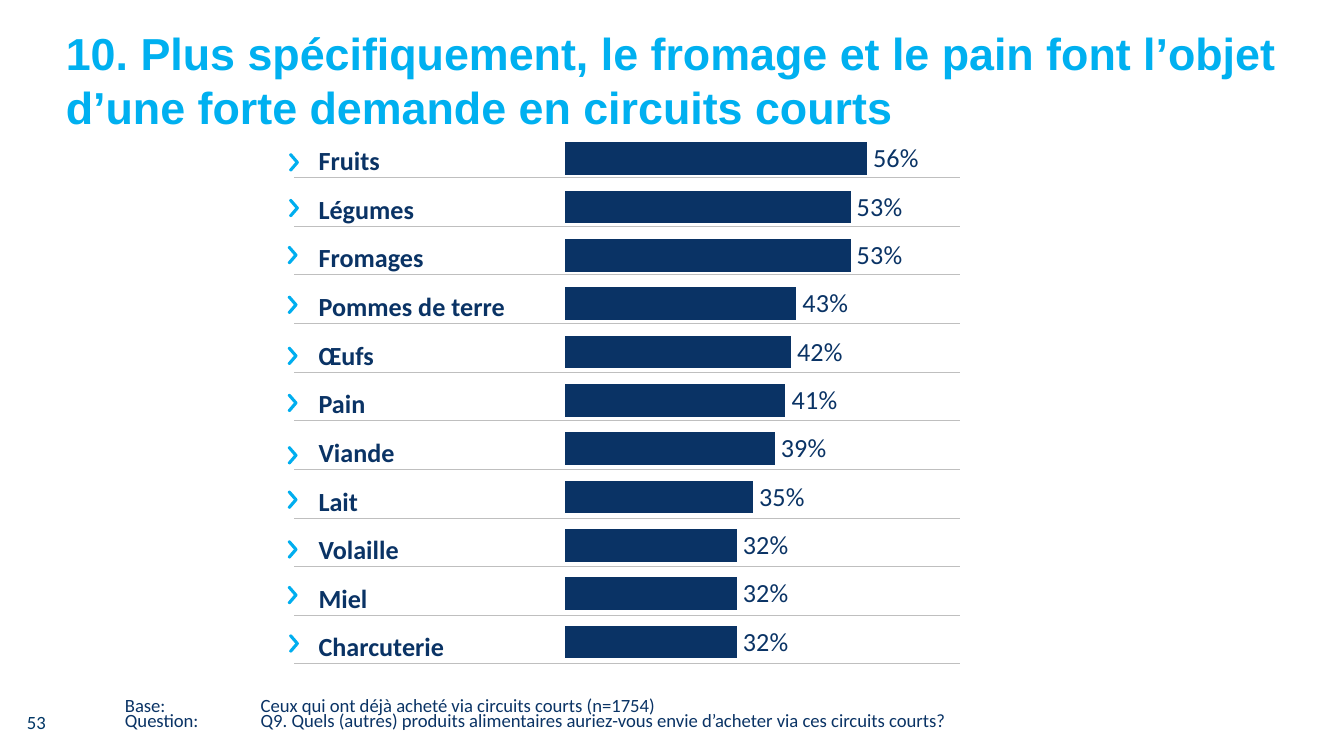
from lxml import etree
from pptx import Presentation
from pptx.chart.data import CategoryChartData
from pptx.dml.color import RGBColor
from pptx.enum.chart import XL_CHART_TYPE, XL_LABEL_POSITION, XL_TICK_LABEL_POSITION, XL_TICK_MARK
from pptx.enum.text import MSO_ANCHOR, MSO_AUTO_SIZE, PP_ALIGN
from pptx.oxml import parse_xml
from pptx.oxml.ns import nsdecls, qn
from pptx.util import Inches, Pt

BAR_CLUSTERED = XL_CHART_TYPE.BAR_CLUSTERED
OUTSIDE_END = XL_LABEL_POSITION.OUTSIDE_END
NO_LABELS = XL_TICK_LABEL_POSITION.NONE
NO_TICKS = XL_TICK_MARK.NONE
TOP, MIDDLE, BOTTOM = MSO_ANCHOR.TOP, MSO_ANCHOR.MIDDLE, MSO_ANCHOR.BOTTOM
LEFT = PP_ALIGN.LEFT
NO_AUTOFIT = MSO_AUTO_SIZE.NONE

THEME = {
    "title": RGBColor.from_string("00B0F0"),
    "chevron": RGBColor.from_string("00AEEF"),
    "navy": RGBColor.from_string("0A3365"),
    "page_number": RGBColor.from_string("003665"),
    "white": RGBColor.from_string("FFFFFF"),
    "rule": "BFBFBF",
    "title_font": "Arial",
    "body_font": "Calibri",
    "title_size": Pt(24),
    "body_size": Pt(14),
    "note_size": Pt(10),
}

# Product, share in percent, left and top of its chevron
PRODUCTS = [
    ("Fruits", 56, 2.15, 1.14),
    ("Légumes", 53, 2.15, 1.48),
    ("Fromages", 53, 2.14, 1.83),
    ("Pommes de terre", 43, 2.14, 2.2),
    ("Œufs", 42, 2.14, 2.58),
    ("Pain", 41, 2.14, 2.93),
    ("Viande", 39, 2.14, 3.32),
    ("Lait", 35, 2.14, 3.65),
    ("Volaille", 32, 2.14, 4.02),
    ("Miel", 32, 2.14, 4.36),
    ("Charcuterie", 32, 2.15, 4.72),
]

# Outline of one chevron, in hundredths of an inch
CHEVRON = [(1.5, 0), (2.3, 0.5), (7, 5.9), (7.4, 6.8), (7, 7.8), (2.3, 13.2), (1.4, 13.6),
           (0.5, 13.2), (0.1, 12.5), (0.5, 11.7), (4.7, 6.8), (0.5, 2), (0.1, 1.2), (0.5, 0.4)]


def style_font(font, color, size, name=THEME["body_font"], bold=False):
    font.name = name
    font.size = size
    font.bold = bold
    font.color.rgb = color


def set_frame(frame, anchor, insets):
    """Fix the wrapping, the anchor and the insets (left, top, right, bottom)."""
    frame.word_wrap = True
    frame.auto_size = NO_AUTOFIT
    frame.vertical_anchor = anchor
    frame.margin_left, frame.margin_top, frame.margin_right, frame.margin_bottom = map(Inches, insets)


deck = Presentation()
deck.slide_width = Inches(10)
deck.slide_height = deck.slide_width * 9 // 16
page = deck.slides.add_slide(deck.slide_layouts[5])
shapes = page.shapes

# Title
title = shapes.title
title.left, title.top, title.width, title.height = Inches(0.39), Inches(0.14), Inches(9.33), Inches(0.59)
set_frame(title.text_frame, TOP, (0.1, 0.05, 0.1, 0.05))
title.text_frame.text = ("10. Plus spécifiquement, le fromage et le pain font l’objet "
                         "d’une forte demande en circuits courts")
para = title.text_frame.paragraphs[0]
para.alignment = LEFT
style_font(para.runs[0].font, THEME["title"], THEME["title_size"], THEME["title_font"], True)

# Base and question
note = shapes.add_textbox(Inches(0.93), Inches(5.22), Inches(8.15), Inches(0.31))
set_frame(note.text_frame, TOP, (0, 0, 0, 0))
note.text_frame.text = (
    "Base:\tCeux qui ont déjà acheté via circuits courts (n=1754)\n"
    "Question:\tQ9. Quels (autres) produits alimentaires auriez-vous envie "
    "d’acheter via ces circuits courts?"
)
for para in note.text_frame.paragraphs:
    para.line_spacing = Pt(8)
    tabs = etree.SubElement(para._p.get_or_add_pPr(), qn("a:tabLst"))
    etree.SubElement(tabs, qn("a:tab"), pos=str(Inches(1.01)), algn="l")
    for span in para.runs:
        style_font(span.font, THEME["navy"], THEME["note_size"])

# Page number
number = shapes.add_textbox(Inches(0.11), Inches(5.22), Inches(2.33), Inches(0.3))
set_frame(number.text_frame, MIDDLE, (0.09, 0.04, 0.09, 0.04))
number.text_frame.text = "53"
style_font(number.text_frame.paragraphs[0].runs[0].font, THEME["page_number"], THEME["note_size"])

# Product names, each above a thin rule
table = shapes.add_table(len(PRODUCTS), 1, Inches(2.19), Inches(0.96), Inches(4.95), Inches(3.98)).table
table.first_row = False
table.horz_banding = False
for row, (product, *_) in enumerate(PRODUCTS):
    cell = table.cell(row, 0)
    cell.text = product
    cell.vertical_anchor = BOTTOM
    cell.margin_left = Inches(0.18)
    cell.margin_top = cell.margin_right = cell.margin_bottom = 0
    cell.fill.background()
    style_font(cell.text_frame.paragraphs[0].runs[0].font, THEME["navy"], THEME["body_size"], bold=True)
    properties = cell._tc.get_or_add_tcPr()
    for index, side in enumerate(("lnL", "lnR", "lnT", "lnB")):
        ruled = side == "lnB" or (side == "lnT" and row > 0)
        paint = f'<a:solidFill><a:srgbClr val="{THEME["rule"]}"/></a:solidFill>' if ruled else "<a:noFill/>"
        border = parse_xml(f'<a:{side} {nsdecls("a")} w="{Pt(0.5)}">{paint}</a:{side}>')
        properties.insert(index, border)

# Shares
data = CategoryChartData(number_format='0"%"')
data.categories = [str(rank) for rank in range(1, len(PRODUCTS) + 1)]
data.add_series("Series 1", [share for _, share, *_ in PRODUCTS])
chart = shapes.add_chart(BAR_CLUSTERED, Inches(4.11), Inches(0.96), Inches(4.25), Inches(4.08), data).chart
chart.has_legend = False
chart.has_title = False
style_font(chart.font, THEME["navy"], THEME["body_size"])

ranks = chart.category_axis
ranks.reverse_order = True
ranks.tick_label_position = NO_LABELS
ranks.major_tick_mark = NO_TICKS
ranks.has_major_gridlines = False
ranks.format.line.fill.background()
scale = chart.value_axis
scale.minimum_scale, scale.maximum_scale, scale.major_unit = 0, 101, 20
scale.has_major_gridlines = False
scale.visible = False

plot = chart.plots[0]
plot.gap_width = 40
plot.vary_by_categories = False
bars = plot.series[0].format
bars.fill.solid()
bars.fill.fore_color.rgb = THEME["navy"]
bars.line.color.rgb = THEME["white"]
bars.line.width = Pt(1)
plot.has_data_labels = True
labels = plot.data_labels
labels.show_value = True
labels.number_format = '0"%"'
labels.number_format_is_linked = False
labels.position = OUTSIDE_END
style_font(labels.font, THEME["navy"], THEME["body_size"])

plot_area = chart._chartSpace.chart.plotArea
for old_layout in plot_area.findall(qn("c:layout")):
    plot_area.remove(old_layout)
layout = etree.Element(qn("c:layout"))
manual = etree.SubElement(layout, qn("c:manualLayout"))
for tag, value in (("layoutTarget", "inner"), ("xMode", "edge"), ("yMode", "edge"),
                   ("x", "0.02"), ("y", "0.01"), ("w", "0.96"), ("h", "0.97")):
    etree.SubElement(manual, qn(f"c:{tag}")).set("val", value)
plot_area.insert(0, layout)

# Chevrons
for _, _, left, top in PRODUCTS:
    points = [(Inches(left + x / 100), Inches(top + y / 100)) for x, y in CHEVRON]
    builder = shapes.build_freeform(*points[0])
    builder.add_line_segments(points[1:], close=True)
    chevron = builder.convert_to_shape()
    chevron.shadow.inherit = False
    chevron.fill.solid()
    chevron.fill.fore_color.rgb = THEME["chevron"]
    chevron.line.fill.background()

deck.save("out.pptx")
